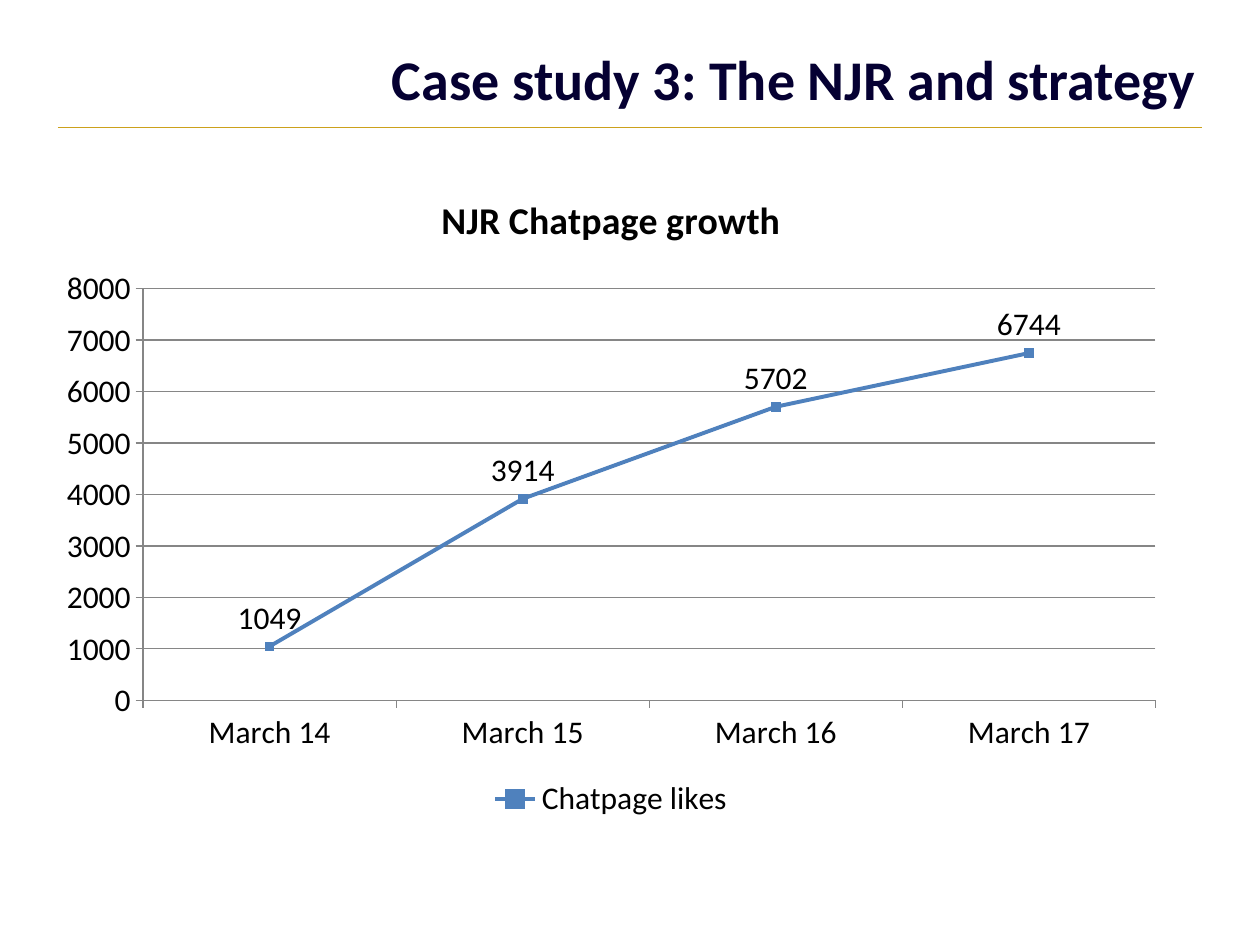
from pptx import Presentation
from pptx.chart.data import CategoryChartData
from pptx.dml.color import RGBColor
from pptx.enum.chart import (XL_CHART_TYPE, XL_LABEL_POSITION, XL_LEGEND_POSITION,
                             XL_MARKER_STYLE, XL_TICK_MARK)
from pptx.enum.shapes import MSO_CONNECTOR
from pptx.enum.text import MSO_ANCHOR, PP_ALIGN
from pptx.oxml.ns import qn
from pptx.util import Inches, Pt
from lxml import etree

LINE_CHART = XL_CHART_TYPE.LINE_MARKERS_STACKED
ABOVE = XL_LABEL_POSITION.ABOVE
BOTTOM = XL_LEGEND_POSITION.BOTTOM
SQUARE = XL_MARKER_STYLE.SQUARE
OUTSIDE = XL_TICK_MARK.OUTSIDE
STRAIGHT = MSO_CONNECTOR.STRAIGHT
TOP = MSO_ANCHOR.TOP
RIGHT = PP_ALIGN.RIGHT

NAVY = RGBColor(0x05, 0x00, 0x32)
GOLD = RGBColor(0xCC, 0xA1, 0x1B)
BLUE = RGBColor(0x4F, 0x81, 0xBD)
GREY = RGBColor(0x86, 0x86, 0x86)
BLACK = RGBColor(0, 0, 0)
FONT = "Calibri"
WIDTH, HEIGHT = Inches(10), Inches(7.5)
MONTHS = ["March 14", "March 15", "March 16", "March 17"]
LIKES = [1049, 3914, 5702, 6744]


def share(x, y, width, height):
    """Turn shares of the slide into a box of lengths."""
    return int(x * WIDTH), int(y * HEIGHT), int(width * WIDTH), int(height * HEIGHT)


def write(frame, text, *, size, color, bold=False, align=None):
    """Write one formatted paragraph into a text frame."""
    paragraph = frame.paragraphs[0]
    paragraph.alignment = align
    run = paragraph.add_run()
    run.text = text
    style(run.font, size, color, bold)


def style(font, size, color, bold=False):
    """Set the typeface, size, colour and weight of a font."""
    font.name, font.size, font.bold = FONT, Pt(size), bold
    font.color.rgb = color


def add_heading(slide, box, text):
    """Place the right-aligned heading in its box."""
    frame = slide.shapes.add_textbox(*box).text_frame
    frame.word_wrap = True
    frame.vertical_anchor = TOP
    write(frame, text, size=32, color=NAVY, bold=True, align=RIGHT)


def add_rule(slide, box):
    """Draw the gold rule along the top of its box."""
    left, top, width, _ = box
    rule = slide.shapes.add_connector(STRAIGHT, left, top, left + width, top)
    rule.line.color.rgb = GOLD
    rule.line.width = Pt(1)
    etree.SubElement(rule._element.spPr, qn("a:effectLst"))


def style_axis(axis):
    """Give an axis its grey line and outside ticks."""
    axis.major_tick_mark = OUTSIDE
    axis.format.line.color.rgb = GREY
    axis.format.line.width = Pt(0.75)


def add_growth_chart(slide, box):
    """Place the line chart of yearly likes in its box."""
    data = CategoryChartData(number_format="General")
    data.categories = MONTHS
    data.add_series("Chatpage likes", LIKES)
    chart = slide.shapes.add_chart(LINE_CHART, *box, data).chart
    style(chart.font, 18, BLACK)
    write(chart.chart_title.text_frame, "NJR Chatpage growth",
          size=21.6, color=BLACK, bold=True)
    chart.chart_title.include_in_layout = False
    chart.has_legend = True
    chart.legend.position = BOTTOM
    chart.legend.include_in_layout = False

    for axis in (chart.category_axis, chart.value_axis):
        style_axis(axis)
    chart.value_axis.has_major_gridlines = True
    grid = chart.value_axis.major_gridlines.format.line
    grid.color.rgb = GREY
    grid.width = Pt(0.75)

    plot = chart.plots[0]
    plot.vary_by_categories = False
    likes = plot.series[0]
    likes.smooth = False
    likes.format.line.color.rgb = BLUE
    likes.format.line.width = Pt(2.25)
    likes.marker.style = SQUARE
    likes.marker.size = 5
    likes.marker.format.fill.solid()
    likes.marker.format.fill.fore_color.rgb = BLUE
    likes.marker.format.line.color.rgb = BLUE
    labels = likes.data_labels
    labels.show_value = True
    labels.position = ABOVE
    style(labels.font, 18, BLACK)


def main():
    """Build the slide and save it."""
    deck = Presentation()
    deck.slide_width, deck.slide_height = WIDTH, HEIGHT
    slide = deck.slides.add_slide(deck.slide_layouts[6])
    add_rule(slide, share(0.046, 0.135, 0.908, 0))
    add_heading(slide, share(0.059, 0.04, 0.9, 0.167),
                "Case study 3: The NJR and strategy")
    add_growth_chart(slide, share(0.035, 0.176, 0.9, 0.696))
    deck.save("out.pptx")


if __name__ == "__main__":
    main()
